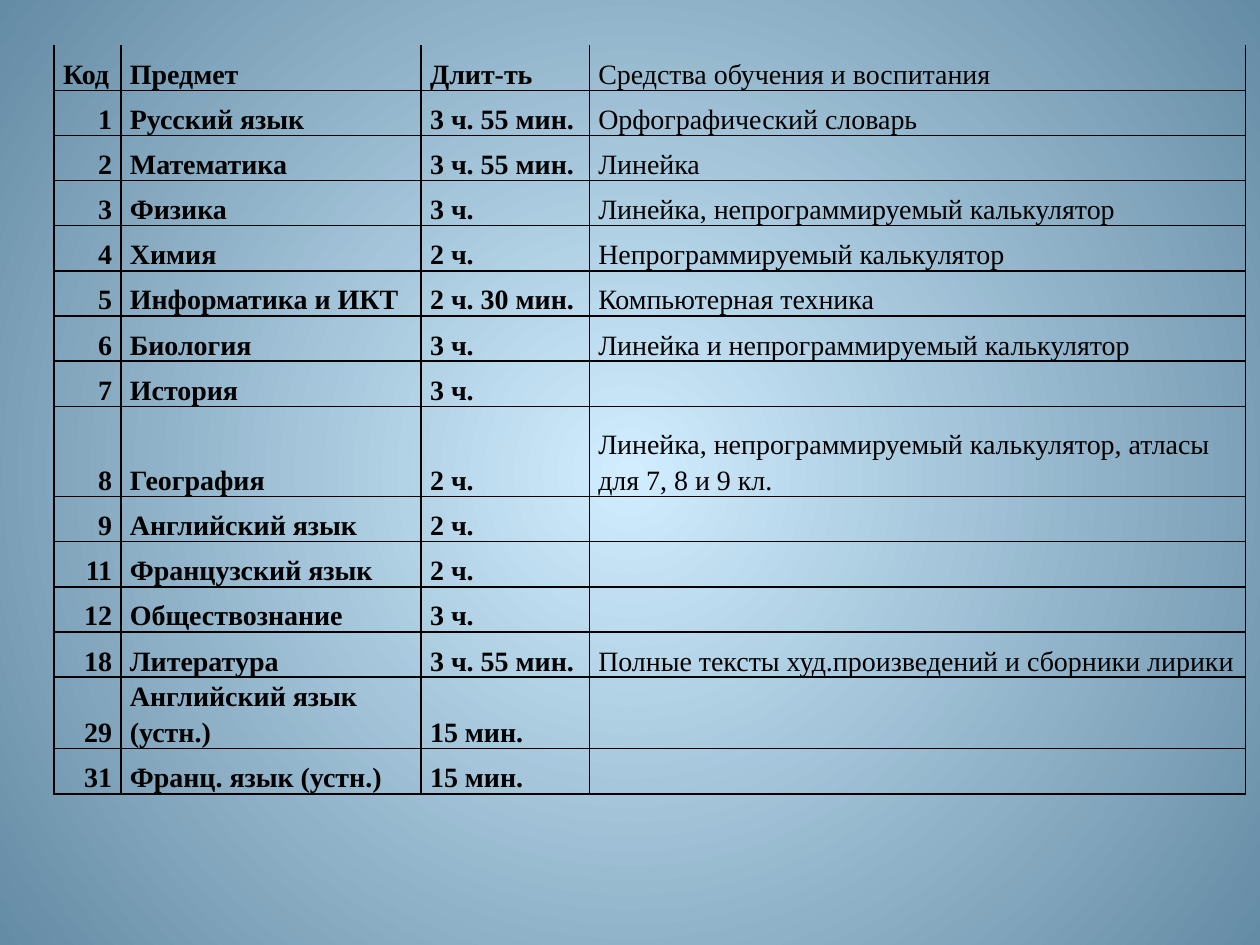
from lxml.etree import SubElement
from pptx import Presentation
from pptx.dml.color import RGBColor
from pptx.enum.text import MSO_ANCHOR, PP_ALIGN
from pptx.oxml import parse_xml
from pptx.oxml.ns import nsdecls, qn
from pptx.util import Cm, Pt

HEADER = ("Код", "Предмет", "Длит-ть", "Средства обучения и воспитания")
EXAMS = [
    ("1", "Русский язык", "3 ч. 55 мин.", "Орфографический словарь"),
    ("2", "Математика", "3 ч. 55 мин.", "Линейка"),
    ("3", "Физика", "3 ч.", "Линейка, непрограммируемый калькулятор"),
    ("4", "Химия", "2 ч.", "Непрограммируемый калькулятор"),
    ("5", "Информатика и ИКТ", "2 ч. 30 мин.", "Компьютерная техника"),
    ("6", "Биология", "3 ч.", "Линейка и непрограммируемый калькулятор"),
    ("7", "История", "3 ч.", ""),
    ("8", "География", "2 ч.",
     "Линейка, непрограммируемый калькулятор, атласы для 7, 8 и 9 кл."),
    ("9", "Английский язык", "2 ч.", ""),
    ("11", "Французский язык", "2 ч.", ""),
    ("12", "Обществознание", "3 ч.", ""),
    ("18", "Литература", "3 ч. 55 мин.",
     "Полные тексты худ.произведений и сборники лирики"),
    ("29", "Английский язык (устн.)", "15 мин.", ""),
    ("31", "Франц. язык (устн.)", "15 мин.", ""),
]
ROWS = [HEADER, *EXAMS]

THEME = {
    "font": "Times New Roman",
    "size": Pt(16),
    "text": RGBColor.from_string("000000"),
    "border": "000000",
    "border_width": Pt(1),
    "glow": ("D1EDFF", "658CA5"),
}
LEFT, TOP = Cm(1.09), Cm(0.91)
COL_WIDTHS = [Cm(w) for w in (1.35, 6.05, 3.39, 13.23)]
ROW_HEIGHT = Cm(0.91)
TALL_ROWS = {"8": 2}  # exam code: height in single rows
CELL_FORMAT = {
    "vertical_anchor": MSO_ANCHOR.BOTTOM,
    "margin_left": Cm(0.18),
    "margin_right": Cm(0.18),
    "margin_top": 0,
    "margin_bottom": 0,
}


def set_attrs(target, values):
    for name, value in values.items():
        setattr(target, name, value)


def paint_background(slide):
    """Radial gradient spreading from the slide's centre."""
    fill = slide.background.fill
    fill.gradient()
    for stop, color in zip(fill.gradient_stops, THEME["glow"]):
        stop.color.rgb = RGBColor.from_string(color)
    grad = slide.element.find(".//" + qn("a:gradFill"))
    grad.remove(grad.find(qn("a:lin")))
    circle = SubElement(grad, qn("a:path"), path="circle")
    SubElement(circle, qn("a:fillToRect"), {side: "50000" for side in "ltrb"})


def set_borders(cell, sides):
    """Draw the given sides and clear the others."""
    tc_pr = cell._tc.get_or_add_tcPr()
    for i, side in enumerate("LRTB"):
        paint = "<a:noFill/>"
        if side in sides:
            paint = f'<a:solidFill><a:srgbClr val="{THEME["border"]}"/></a:solidFill>'
        tc_pr.insert(i, parse_xml(
            f'<a:ln{side} {nsdecls("a")} w="{THEME["border_width"]}">{paint}</a:ln{side}>'))


def write_cell(cell, text, bold, align):
    set_attrs(cell, CELL_FORMAT)
    cell.fill.background()
    p = cell.text_frame.paragraphs[0]
    set_attrs(p, {"alignment": align, "line_spacing": 1.15})
    if text:
        r = p.add_run()
        r.text = text
        set_attrs(r.font, {"name": THEME["font"], "size": THEME["size"], "bold": bold})
        r.font.color.rgb = THEME["text"]


def add_exam_table(slide):
    heights = [ROW_HEIGHT * TALL_ROWS.get(row[0], 1) for row in ROWS]
    table = slide.shapes.add_table(len(ROWS), len(HEADER), LEFT, TOP,
                                   sum(COL_WIDTHS), sum(heights)).table
    set_attrs(table, {"first_row": False, "horz_banding": False})
    for col, width in zip(table.columns, COL_WIDTHS):
        col.width = width
    for i, (row, height) in enumerate(zip(ROWS, heights)):
        table.rows[i].height = height
        for j, text in enumerate(row):
            cell = table.cell(i, j)
            is_code = i > 0 and j == 0
            write_cell(cell, text, bold=j < len(HEADER) - 1,
                       align=PP_ALIGN.RIGHT if is_code else PP_ALIGN.LEFT)
            set_borders(cell, "LRTB" if i else "LRB")


def main():
    prs = Presentation()
    set_attrs(prs, {"slide_width": Cm(25.4), "slide_height": Cm(19.05)})
    slide = prs.slides.add_slide(prs.slide_layouts[6])
    paint_background(slide)
    add_exam_table(slide)
    prs.save("out.pptx")


if __name__ == "__main__":
    main()
